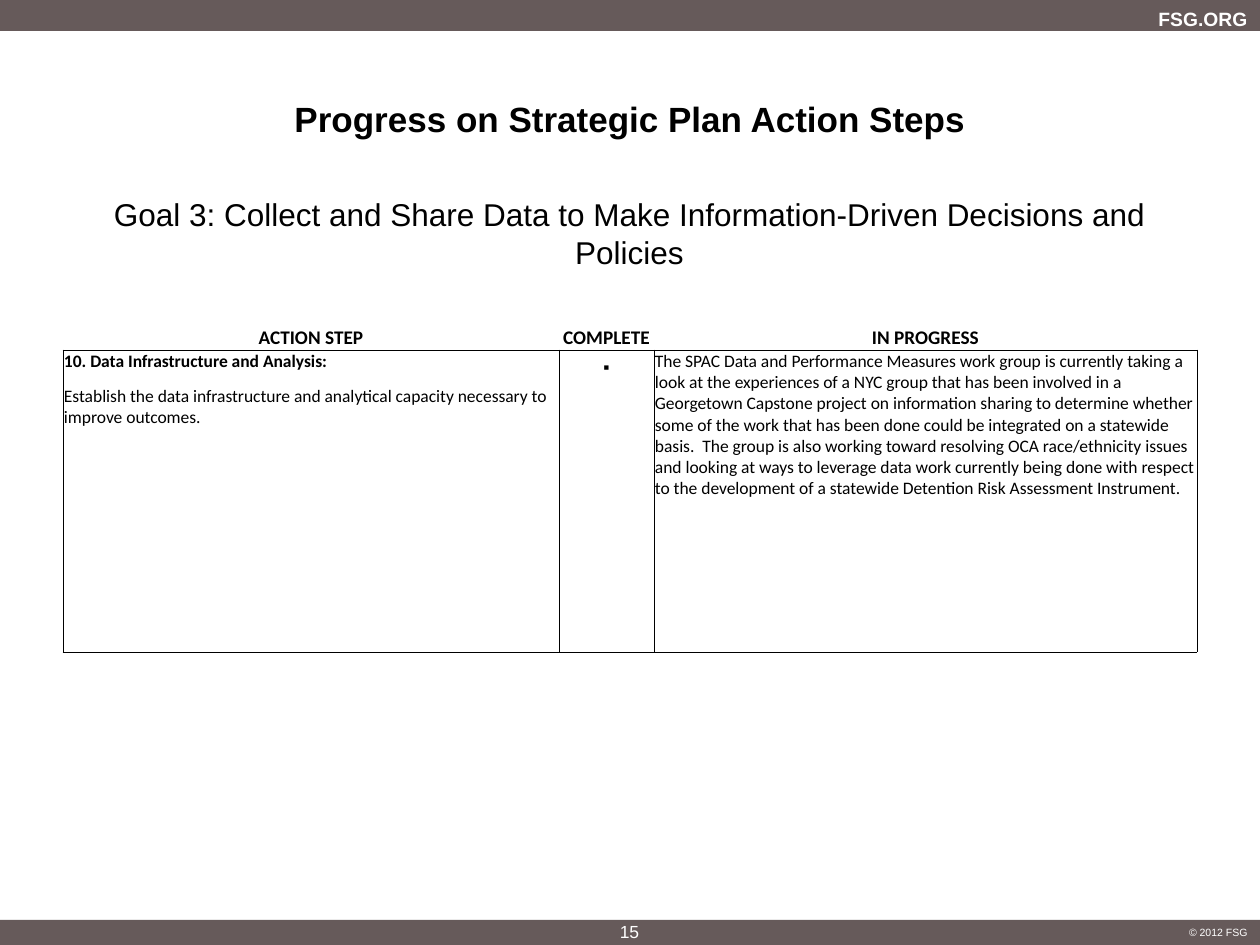
from lxml import etree
from pptx import Presentation
from pptx import util as u
from pptx.dml.color import RGBColor
from pptx.enum import shapes, text
from pptx.oxml.ns import qn

PX = 914400 // 126
COLORS = {"bar": "665A5A", "light": "FFFFFF", "ink": "000000"}
LEFT, CENTER, RIGHT = text.PP_ALIGN.LEFT, text.PP_ALIGN.CENTER, text.PP_ALIGN.RIGHT
TOP, MIDDLE, BOTTOM = text.MSO_ANCHOR.TOP, text.MSO_ANCHOR.MIDDLE, text.MSO_ANCHOR.BOTTOM

TITLE = "Progress on Strategic Plan Action Steps"
GOAL = "Goal 3: Collect and Share Data to Make Information-Driven Decisions and Policies"
BARS = [(0, 0, 1260, 31), (0, 920, 1260, 25)]
# text, place, size, bold, alignment, vertical inset
LABELS = [
    ("15", (606, 919, 47, 26), 10, False, CENTER, 2),
    ("FSG.ORG", (1145, 0, 115, 37), 11, True, RIGHT, 6),
    ("© 2012 FSG", (1176, 920, 84, 25), 6, False, RIGHT, 6),
]

TABLE_AT = (63, 315)
COLUMNS = [496, 95, 543]
ROWS = [35, 35, 267]
HEADERS = ["ACTION STEP", "COMPLETE", "IN PROGRESS"]
STEP = "10. Data Infrastructure and Analysis:"
DETAIL = ("Establish the data infrastructure and analytical capacity necessary "
          "to improve outcomes.")
PROGRESS = (
    "The SPAC Data and Performance Measures work group is currently taking a look at the "
    "experiences of a NYC group that has been involved in a Georgetown Capstone project on "
    "information sharing to determine whether some of the work that has been done could be "
    "integrated on a statewide basis.  The group is also working toward resolving OCA "
    "race/ethnicity issues and looking at ways to leverage data work currently being done "
    "with respect to the development of a statewide Detention Risk Assessment Instrument."
)
# row, column, text, format
ENTRIES = [(0, column, header, dict(size=11, bold=True, align=CENTER, anchor=BOTTOM))
           for column, header in enumerate(HEADERS)] + [
    (1, 0, STEP, dict(bold=True)),
    (1, 1, "▪", dict(font="Arial", align=CENTER, anchor=MIDDLE)),
    (1, 2, PROGRESS, {}),
    (2, 0, DETAIL, {}),
]
# borders of each row: the two lower rows share one frame
BORDERS = ["B", "LRT", "LRB"]


def px(*lengths):
    return [u.Emu(length * PX) for length in lengths]


def write(frame, words, size=10, font="Calibri", color="ink", bold=False, align=LEFT):
    para = frame.paragraphs[0]
    para.alignment = align
    para.space_before = u.Pt(0)
    span = para.add_run()
    span.text = words
    span.font.size = u.Pt(size)
    span.font.name = font
    span.font.bold = bold
    span.font.color.rgb = RGBColor.from_string(COLORS[color])


def place(shape, left, top, width, height):
    shape.left, shape.top, shape.width, shape.height = px(left, top, width, height)


def set_borders(cell, sides):
    """Draw the sides named by letter and clear the others."""
    props = cell._tc.get_or_add_tcPr()
    for side in "LRTB":
        line = etree.SubElement(props, qn(f"a:ln{side}"), w=str(u.Pt(0.5)))
        if side in sides:
            fill = etree.SubElement(line, qn("a:solidFill"))
            etree.SubElement(fill, qn("a:srgbClr"), val=COLORS["ink"])
        else:
            etree.SubElement(line, qn("a:noFill"))


def add_bars_and_labels(page):
    for bar_at in BARS:
        bar = page.shapes.add_shape(shapes.MSO_SHAPE.RECTANGLE, *px(*bar_at))
        bar.shadow.inherit = False
        bar.fill.solid()
        bar.fill.fore_color.rgb = RGBColor.from_string(COLORS["bar"])
        bar.line.fill.background()
    for words, label_at, size, bold, align, inset in LABELS:
        frame = page.shapes.add_textbox(*px(*label_at)).text_frame
        frame.word_wrap = False
        frame.vertical_anchor = MIDDLE
        frame.margin_top, frame.margin_bottom = px(inset, inset)
        write(frame, words, size=size, font="Arial", color="light", bold=bold, align=align)


def fill_placeholders(page):
    title, body = page.placeholders[0], page.placeholders[1]
    place(title, 54, 73, 1152, 91)
    place(body, 50, 189, 1159, 609)
    for box, anchor in ((title, MIDDLE), (body, TOP)):
        box.text_frame.auto_size = text.MSO_AUTO_SIZE.NONE
        box.text_frame.vertical_anchor = anchor
    title.text_frame.margin_top = title.text_frame.margin_bottom = 0
    props = body.text_frame.paragraphs[0]._p.get_or_add_pPr()
    props.set("marL", "0")
    props.set("indent", "0")
    etree.SubElement(props, qn("a:buNone"))
    write(title.text_frame, TITLE, size=20, font="Arial", bold=True, align=CENTER)
    write(body.text_frame, GOAL, size=18, font="Arial", align=CENTER)


def add_action_table(page):
    frame = page.shapes.add_table(len(ROWS), len(COLUMNS),
                                  *px(*TABLE_AT, sum(COLUMNS), sum(ROWS)))
    table = frame.table
    table.first_row = table.horz_banding = False
    for column, width in zip(table.columns, px(*COLUMNS)):
        column.width = width
    for row, height, sides in zip(table.rows, px(*ROWS), BORDERS):
        row.height = height
        for cell in row.cells:
            set_borders(cell, sides)
            cell.fill.background()
            cell.margin_left, cell.margin_top, cell.margin_right, cell.margin_bottom = px(1, 1, 1, 0)
    table.cell(1, 2).merge(table.cell(2, 2))
    set_cell = table.cell(1, 2)._tc.tcPr.find(qn("a:lnB"))
    set_cell.getparent().replace(set_cell, bottom_line(table))
    for row, column, words, style in ENTRIES:
        cell = table.cell(row, column)
        style = dict(style)
        cell.vertical_anchor = style.pop("anchor", TOP)
        write(cell.text_frame, words, **style)


def bottom_line(table):
    """Copy of the frame's lower border, for the merged cell."""
    return etree.fromstring(etree.tostring(table.cell(2, 0)._tc.tcPr.find(qn("a:lnB"))))


def main():
    deck = Presentation()
    deck.slide_width, deck.slide_height = px(1260, 945)
    page = deck.slides.add_slide(deck.slide_layouts[1])
    add_bars_and_labels(page)
    fill_placeholders(page)
    add_action_table(page)
    deck.save("out.pptx")


if __name__ == "__main__":
    main()
